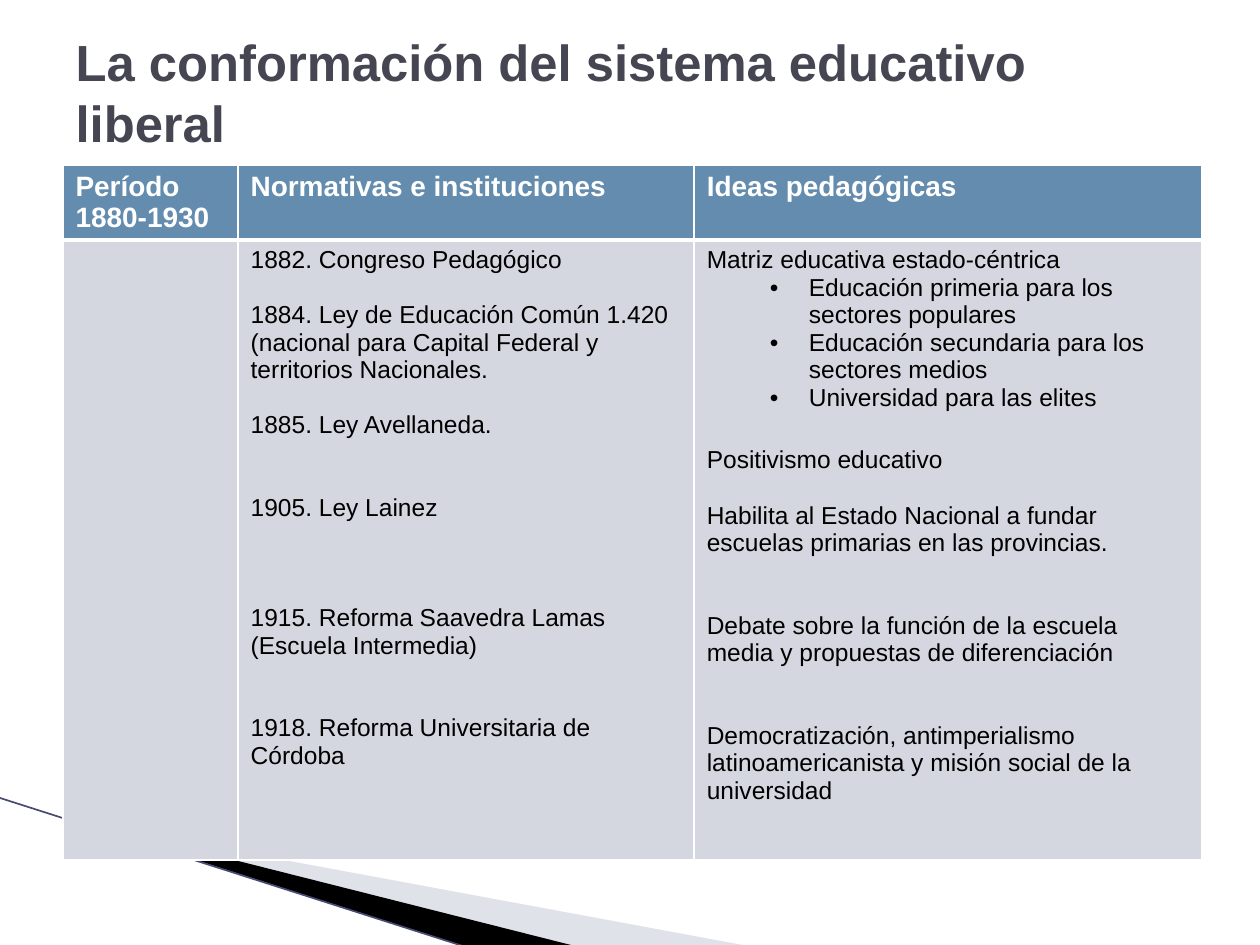
from lxml.etree import SubElement
from pptx import Presentation
from pptx.dml.color import RGBColor
from pptx.enum.shapes import MSO_CONNECTOR
from pptx.enum.text import MSO_ANCHOR, MSO_AUTO_SIZE, PP_ALIGN
from pptx.oxml.ns import qn
from pptx.util import Inches, Pt

FONT = "Arial"
WHITE = RGBColor(0xFF, 0xFF, 0xFF)
BLACK = RGBColor(0x00, 0x00, 0x00)
TITLE_GREY = RGBColor(0x46, 0x46, 0x53)
HEADER_BLUE = RGBColor(0x63, 0x8C, 0xAE)
BODY_GREY = RGBColor(0xD5, 0xD7, 0xE0)
SWOOSH_BLUE = RGBColor(0xB3, 0xB7, 0xCB)
LINE_BLUE = RGBColor(0x46, 0x4B, 0x75)

BODY_LINE = 15.75
TITLE = "La conformación del sistema educativo liberal"
COLUMN_WIDTHS = [1.39, 3.62, 4.03]
ROW_HEIGHTS = [0.59, 4.92]
HEADERS = [["Período", "1880-1930"], ["Normativas e instituciones"], ["Ideas pedagógicas"]]

# fmt: off
LAWS = [
    ("1882. Congreso Pedagógico", 0, False),
    ("1884. Ley de Educación Común 1.420 (nacional para Capital Federal y territorios Nacionales.", 1, False),
    ("1885. Ley Avellaneda.", 1, False),
    ("1905. Ley Lainez", 2, False),
    ("1915. Reforma Saavedra Lamas (Escuela Intermedia)", 3, False),
    ("1918. Reforma Universitaria de Córdoba", 2, False),
]
IDEAS = [
    ("Matriz educativa estado-céntrica", 0, False),
    ("Educación primeria para los sectores populares", 0, True),
    ("Educación secundaria para los sectores medios", 0, True),
    ("Universidad para las elites", 0, True),
    ("Positivismo educativo", 1.28, False),
    ("Habilita al Estado Nacional a fundar escuelas primarias en las provincias.", 1, False),
    ("Debate sobre la función de la escuela media y propuestas de diferenciación", 2, False),
    ("Democratización, antimperialismo latinoamericanista y misión social de la universidad", 2, False),
]
# fmt: on


def add_run(p, text, size, color, bold):
    r = p.add_run()
    r.text = text
    r.font.name = FONT
    r.font.size = Pt(size)
    r.font.bold = bold
    r.font.color.rgb = color


def add_swoosh(slide, points, color, alpha=None):
    corners = [(Inches(x), Inches(y)) for x, y in points]
    builder = slide.shapes.build_freeform(*corners[0])
    builder.add_line_segments(corners[1:], close=True)
    sp = builder.convert_to_shape()
    sp.shadow.inherit = False
    sp.fill.solid()
    sp.fill.fore_color.rgb = color
    sp.line.fill.background()
    if alpha is not None:
        clr = next(sp._element.spPr.iter(qn("a:srgbClr")))
        SubElement(clr, qn("a:alpha"), val=str(alpha * 1000))


def add_decoration(slide):
    add_swoosh(slide, [(0.55, 6.51), (5.95, 7.51), (4.56, 7.51), (0.55, 6.5)], SWOOSH_BLUE, 40)
    add_swoosh(slide, [(0.53, 6.49), (4.57, 7.51), (3.72, 7.52), (0.54, 6.5)], BLACK)
    ends = [Inches(v) for v in (-0.01, 6.33, 3.71, 7.52)]
    line = slide.shapes.add_connector(MSO_CONNECTOR.STRAIGHT, *ends)
    line.line.color.rgb = LINE_BLUE
    line.line.width = Pt(0.95)
    SubElement(line._element.spPr, qn("a:effectLst"))


def add_title(slide, left, top, width, height):
    sp = slide.shapes.title
    sp.left, sp.top, sp.width, sp.height = left, top, width, height
    tf = sp.text_frame
    tf.word_wrap = True
    tf.auto_size = MSO_AUTO_SIZE.NONE
    tf.vertical_anchor = MSO_ANCHOR.MIDDLE
    p = tf.paragraphs[0]
    p.alignment = PP_ALIGN.LEFT
    p.line_spacing = Pt(35)
    add_run(p, TITLE, 29, TITLE_GREY, True)


def format_cell(cell, color, top, bottom):
    tcPr = cell._tc.get_or_add_tcPr()
    for side, width in (("L", 1), ("R", 1), ("T", top), ("B", bottom)):
        ln = SubElement(tcPr, qn(f"a:ln{side}"), w=str(Pt(width)))
        SubElement(SubElement(ln, qn("a:solidFill")), qn("a:srgbClr"), val=str(WHITE))
    cell.fill.solid()
    cell.fill.fore_color.rgb = color


def add_bullet(p):
    pPr = p._p.get_or_add_pPr()
    pPr.set("marL", str(Inches(0.81)))
    pPr.set("indent", str(Inches(-0.31)))
    SubElement(pPr, qn("a:buFont"), typeface=FONT)
    SubElement(pPr, qn("a:buChar"), char="•")


def fill_cell(cell, entries, size, color, bold):
    tf = cell.text_frame
    for i, (text, gap_lines, bulleted) in enumerate(entries):
        p = tf.add_paragraph() if i else tf.paragraphs[0]
        if bulleted:
            p.level = 1
            add_bullet(p)
        if gap_lines:
            p.space_before = Pt(gap_lines * BODY_LINE)
        add_run(p, text, size, color, bold)


def add_period_table(slide, left, top, width, height):
    table = slide.shapes.add_table(2, 3, left, top, width, height).table
    table.horz_banding = False
    for column, w in zip(table.columns, COLUMN_WIDTHS):
        column.width = Inches(w)
    for row, h in zip(table.rows, ROW_HEIGHTS):
        row.height = Inches(h)
    for c, (header, body) in enumerate(zip(HEADERS, ([], LAWS, IDEAS))):
        head_cell, body_cell = table.cell(0, c), table.cell(1, c)
        format_cell(head_cell, HEADER_BLUE, 1, 3)
        format_cell(body_cell, BODY_GREY, 3, 1)
        fill_cell(head_cell, [(text, 0, False) for text in header], 16, WHITE, True)
        fill_cell(body_cell, body, 14, BLACK, False)


def main():
    prs = Presentation()
    prs.slide_width, prs.slide_height = Inches(10), Inches(7.5)
    slide = prs.slides.add_slide(prs.slide_layouts[5])
    add_decoration(slide)
    add_period_table(slide, Inches(0.5), Inches(1.31), Inches(9.04), Inches(5.51))
    add_title(slide, Inches(0.5), Inches(0.3), Inches(9), Inches(0.85))
    prs.save("out.pptx")


if __name__ == "__main__":
    main()
